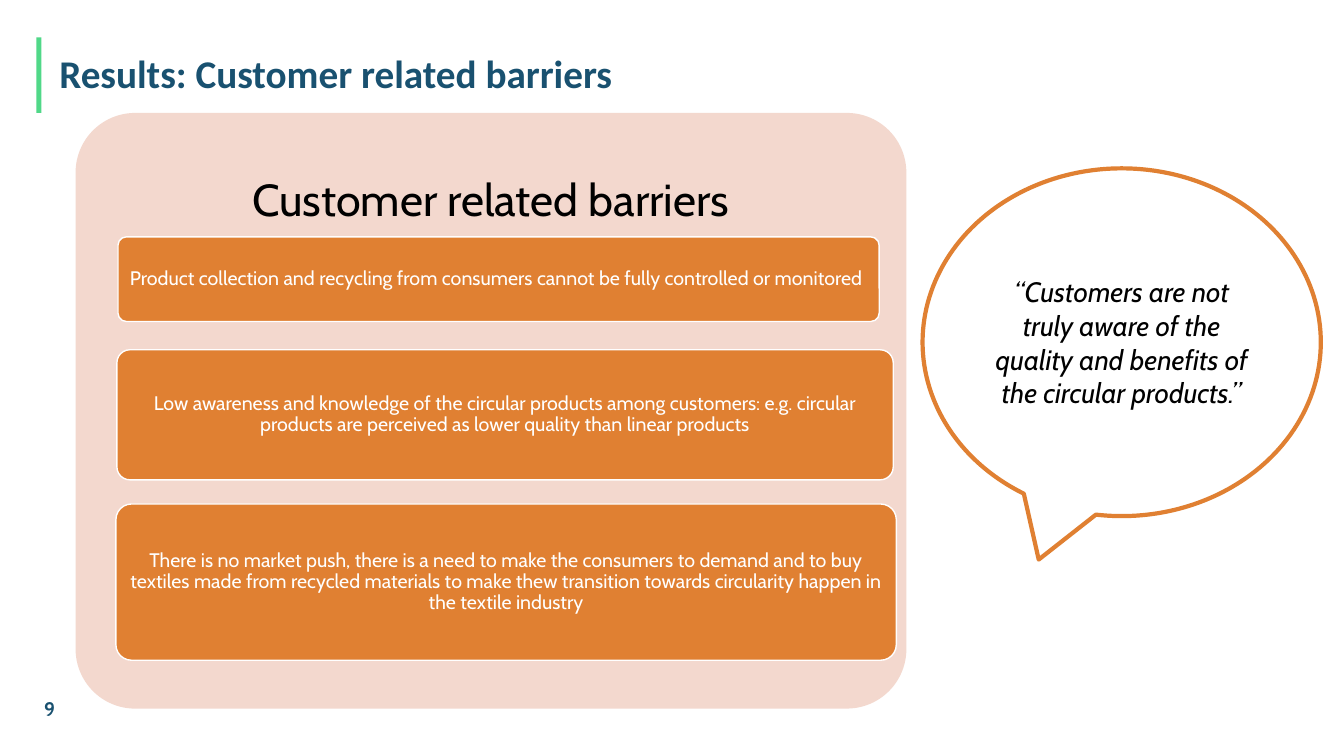
from pptx import Presentation
from pptx import util as u
from pptx.dml.color import RGBColor
from pptx.enum import shapes, text

theme = {
    "navy": "195170", "green": "50D888", "peach": "F3D8CE",
    "orange": "E08032", "white": "FFFFFF", "black": "000000",
    "title": {"size": 28, "name": "Calibri", "bold": True},
    "page": {"size": 14, "name": "Cabin", "bold": True},
    "head": {"size": 32, "name": "Cabin"},
    "card": {"size": 14, "name": "Cabin"},
    "quote": {"size": 20, "name": "Cabin", "italic": True},
}

deck = Presentation()
deck.slide_width, deck.slide_height = u.Inches(13.33), u.Inches(7.5)
slide = deck.slides.add_slide(deck.slide_layouts[6])


def draw(kind, box, fill, line=None, width=1):
    shape = slide.shapes.add_shape(kind, *map(u.Inches, box))
    shape.shadow.inherit = False
    shape.fill.solid()
    shape.fill.fore_color.rgb = RGBColor.from_string(theme[fill])
    if line:
        shape.line.color.rgb = RGBColor.from_string(theme[line])
        shape.line.width = u.Pt(width)
    else:
        shape.line.fill.background()
    return shape


def write(shape, words, style, color, align="CENTER", pad=(0.1, 0.05), lead=0.9):
    frame = shape.text_frame
    frame.word_wrap = True
    frame.vertical_anchor = text.MSO_ANCHOR.MIDDLE
    frame.margin_left = frame.margin_right = u.Inches(pad[0])
    frame.margin_top = frame.margin_bottom = u.Inches(pad[1])
    para = frame.paragraphs[0]
    para.alignment = text.PP_ALIGN[align]
    para.line_spacing = lead
    run = para.add_run()
    run.text = words
    run.font.color.rgb = RGBColor.from_string(theme[color])
    for key, value in theme[style].items():
        setattr(run.font, key, u.Pt(value) if key == "size" else value)


# Accent bar, title and page number
draw(shapes.MSO_SHAPE.RECTANGLE, (0.36, 0.37, 0.05, 0.75), "green")
for box, words, style, lead in (
    ((0.49, 0.37, 11.5, 0.76), "Results: Customer related barriers", "title", 0.9),
    ((0.34, 6.83, 3, 0.4), "9", "page", 1.0),
):
    label = slide.shapes.add_textbox(*map(u.Inches, box))
    write(label, words, style, "navy", "LEFT", lead=lead)

# Panel with its heading
panel = draw(shapes.MSO_SHAPE.ROUNDED_RECTANGLE, (0.75, 1.12, 8.24, 5.91), "peach")
panel.adjustments[0] = 0.1
head = slide.shapes.add_textbox(*map(u.Inches, (0.75, 1.12, 8.24, 1.77)))
write(head, "Customer related barriers", "head", "black", pad=(0.13, 0.13))

# Barrier cards
cards = (
    ((1.17, 2.35, 7.55, 0.84),
     "Product collection and recycling from consumers cannot be fully "
     "controlled or monitored "),
    ((1.16, 3.47, 7.7, 1.29),
     "Low awareness and knowledge of the circular products among customers: "
     "e.g. circular products are perceived as lower quality than linear products"),
    ((1.15, 5, 7.74, 1.55),
     "There is no market push, there is a need to make the consumers to demand "
     "and to buy textiles made from recycled materials to make thew transition "
     "towards circularity happen in the textile industry"),
)
for box, words in cards:
    card = draw(shapes.MSO_SHAPE.ROUNDED_RECTANGLE, box, "orange", "white")
    card.adjustments[0] = 0.1
    write(card, words, "card", "white", pad=(0.04, 0.03))

# Customer quote
quote = draw(shapes.MSO_SHAPE.OVAL_CALLOUT, (9.15, 1.67, 3.95, 3.45),
             "white", "orange", 3)
write(quote, "“Customers are not truly aware of the quality and benefits of "
      "the circular products.”", "quote", "black", lead=1.0)

deck.save("out.pptx")
